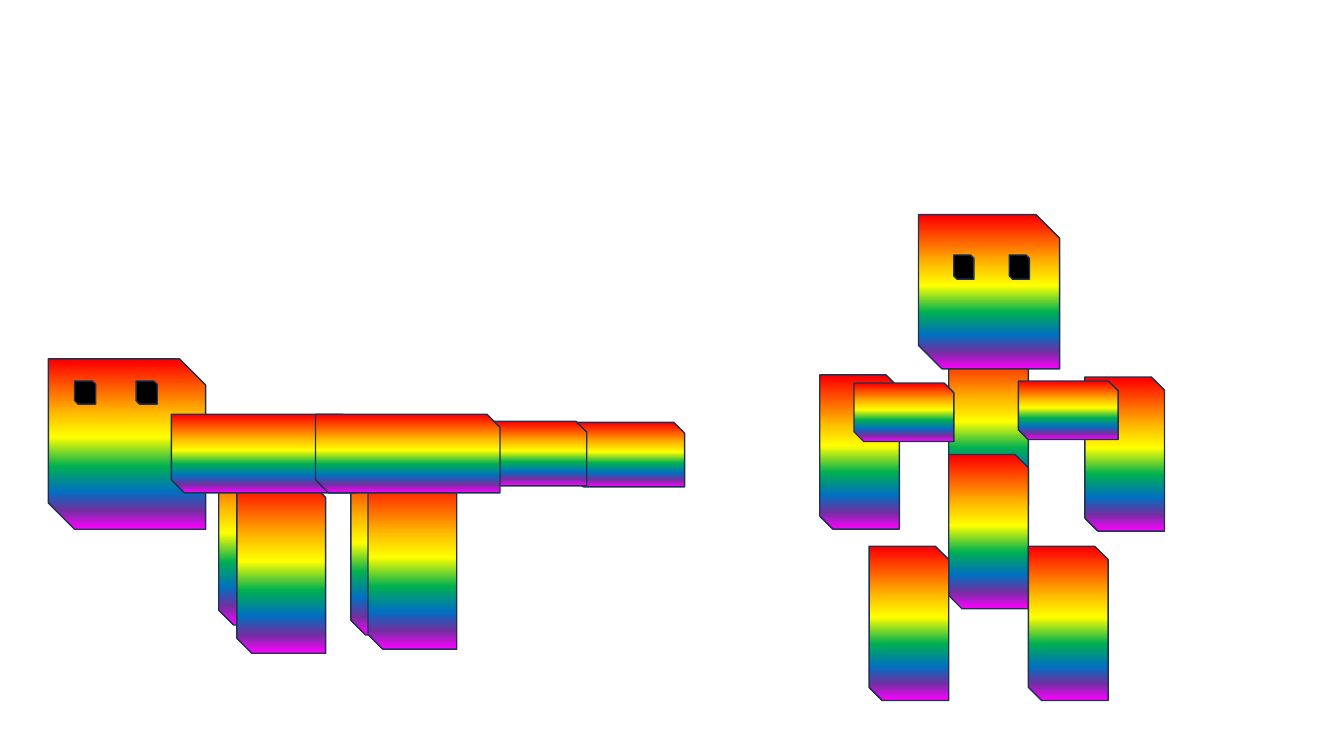
"""Build a slide with a rainbow block animal and a rainbow block person."""
from lxml.etree import SubElement
from pptx import Presentation
from pptx.dml.color import RGBColor
from pptx.enum.shapes import MSO_SHAPE as Shape
from pptx.oxml.ns import qn
from pptx.util import Inches, Pt

RAINBOW = [(1, "FF0000"), (33, "FFC000"), (46, "FFFF00"), (63, "00B050"),
           (78, "0070C0"), (89, "7030A0"), (100, "FF00FF")]
BLACK, OUTLINE = "000000", "1E3256"


def paint(fill, color):
    fill.solid()
    fill.fore_color.rgb = RGBColor.from_string(color)


def add_block(figure, left, top, width, height):
    block = figure.shapes.add_shape(Shape.SNIP_2_DIAG_RECTANGLE, Inches(left), Inches(top),
                                    Inches(width), Inches(height))
    block.shadow.inherit = False
    paint(block.line.fill, OUTLINE)
    block.line.width = Pt(1)
    return block


prs = Presentation()
prs.slide_width, prs.slide_height = Inches(13.33), Inches(7.5)
slide = prs.slides.add_slide(prs.slide_layouts[6])

animal_leg, animal_body, tail = (0.88, 1.69), (1.83, 0.78), (1.11, 0.64)
animal_parts = [
    (2.17, 4.51, *animal_leg),
    (2.35, 4.79, *animal_leg),
    (0.48, 3.56, 1.56, 1.69),
    (3.48, 4.61, *animal_leg),
    (1.7, 4.11, *animal_body),
    (3.65, 4.75, *animal_leg),
    (5.68, 4.19, *tail),
    (4.71, 4.18, *tail),
    (3.13, 4.11, *animal_body),
]
animal_eyes = [(left, 3.78, 0.21, 0.23) for left in (0.74, 1.35)]

limb, shoulder = (0.79, 1.53), (0.99, 0.58)
person_parts = [
    (10.76, 3.74, *limb),
    (9.41, 3.48, *limb),
    (8.13, 3.72, *limb),
    (9.11, 2.13, 1.4, 1.53),
    (9.41, 4.51, *limb),
    (10.2, 5.42, *limb),
    (8.62, 5.42, *limb),
    (8.47, 3.8, *shoulder),
    (10.1, 3.78, *shoulder),
]
person_eyes = [(left, 2.53, 0.2, 0.24) for left in (9.46, 10.01)]

for parts, eyes in [(animal_parts, animal_eyes), (person_parts, person_eyes)]:
    figure = slide.shapes.add_group_shape()
    for part in parts:
        block = add_block(figure, *part)
        block.fill.gradient()
        block.fill.gradient_angle = 270
        stops = block._element.spPr.find(qn("a:gradFill")).find(qn("a:gsLst"))
        for stop in list(stops):
            stops.remove(stop)
        for percent, color in RAINBOW:
            stop = SubElement(stops, qn("a:gs"), pos=str(percent * 1000))
            SubElement(stop, qn("a:srgbClr"), val=color)
    for eye in eyes:
        paint(add_block(figure, *eye).fill, BLACK)

prs.save("out.pptx")
